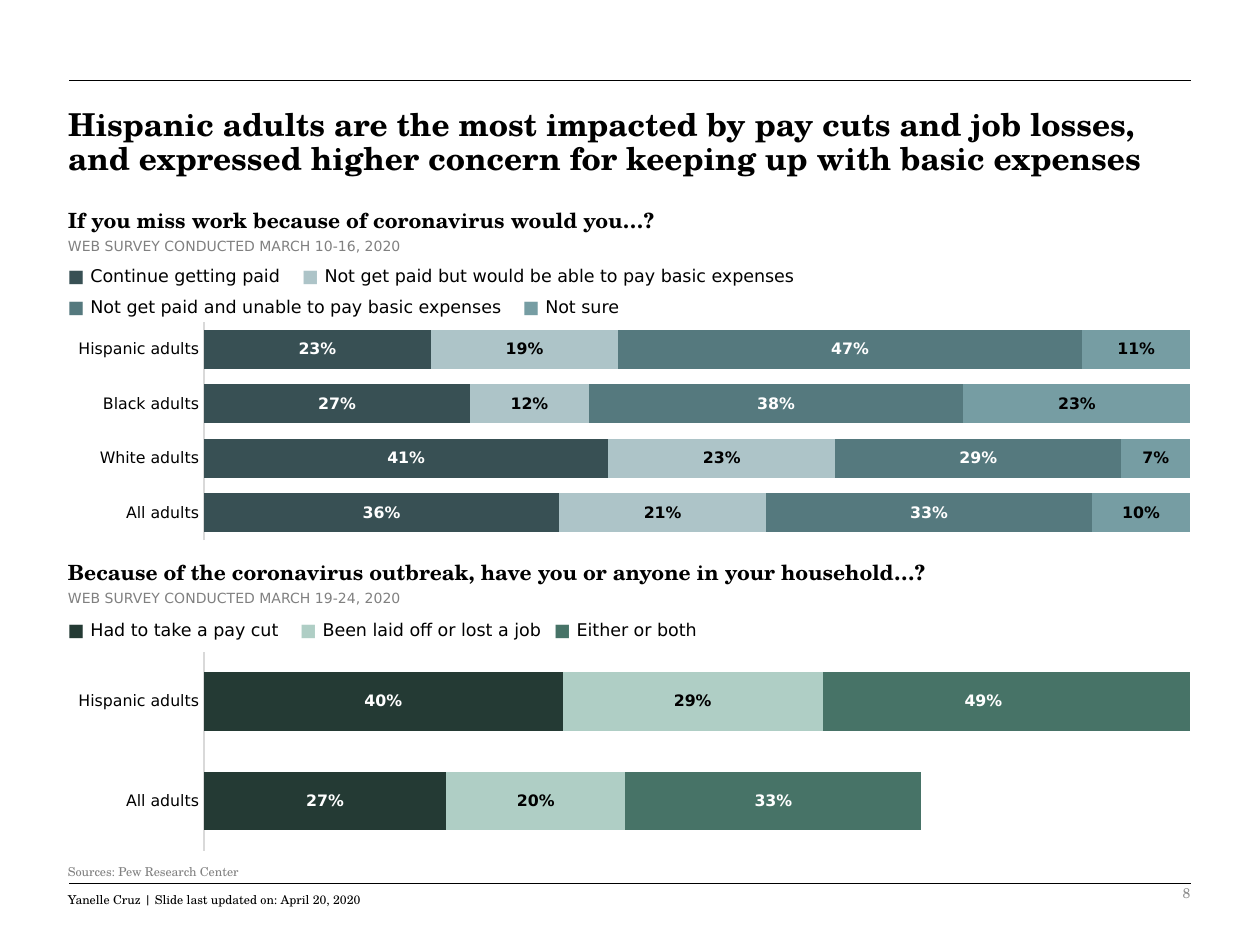
from pptx import Presentation
from pptx.chart.data import CategoryChartData
from pptx.dml.color import RGBColor
from pptx.enum.chart import XL_CHART_TYPE, XL_LABEL_POSITION, XL_TICK_MARK
from pptx.enum.shapes import MSO_CONNECTOR
from pptx.enum.text import MSO_ANCHOR, MSO_AUTO_SIZE, PP_ALIGN
from pptx.oxml.ns import qn
from pptx.oxml.xmlchemy import OxmlElement
from pptx.util import Cm, Pt

STACKED = XL_CHART_TYPE.BAR_STACKED
CENTER = XL_LABEL_POSITION.CENTER
NO_TICK = XL_TICK_MARK.NONE
STRAIGHT = MSO_CONNECTOR.STRAIGHT
TOP, MIDDLE = MSO_ANCHOR.TOP, MSO_ANCHOR.MIDDLE
NO_FIT = MSO_AUTO_SIZE.NONE
LEFT_ALIGN, RIGHT_ALIGN = PP_ALIGN.LEFT, PP_ALIGN.RIGHT

SERIF, SANS = "TeX Gyre Schola", "DejaVu Sans"
BLACK = RGBColor(0x00, 0x00, 0x00)
WHITE = RGBColor(0xFF, 0xFF, 0xFF)
GRAY = RGBColor(0x80, 0x80, 0x80)
NUMBER_GRAY = RGBColor(0x8C, 0x8C, 0x8C)
AXIS_GRAY = RGBColor(0xD9, 0xD9, 0xD9)
SLATE = RGBColor(0x38, 0x50, 0x54)
MIST = RGBColor(0xAD, 0xC4, 0xC8)
TEAL = RGBColor(0x55, 0x79, 0x7E)
SKY = RGBColor(0x76, 0x9D, 0xA3)
PINE = RGBColor(0x24, 0x3A, 0x34)
MINT = RGBColor(0xAF, 0xCE, 0xC5)
FERN = RGBColor(0x47, 0x73, 0x67)

TITLE = ("Hispanic adults are the most impacted by pay cuts and job losses, "
         "and expressed higher concern for keeping up with basic expenses")
SOURCES = "Sources: Pew Research Center"
FOOTER = "Yanelle Cruz | Slide last updated on: April 20, 2020"
PAGE_NUMBER = "8"

SECTIONS = [
    {
        "top": 4.06,
        "heading": "If you miss work because of coronavirus would you…?",
        "survey": "WEB SURVEY CONDUCTED MARCH 10-16, 2020",
        "legend_rows": [(0, 1), (2, 3)],
        "legend_tabs": [(4.72,), (9.17,)],
        "legend_offset": 0.94,
        "chart_offset": 2.34,
        "chart_height": 4.6,
        "categories": ["All adults", "White adults", "Black adults", "Hispanic adults"],
        "series": [
            ("Continue getting paid", SLATE, WHITE, (0.36, 0.41, 0.27, 0.23)),
            ("Not get paid but would be able to pay basic expenses", MIST, BLACK,
             (0.21, 0.23, 0.12, 0.19)),
            ("Not get paid and unable to pay basic expenses", TEAL, WHITE,
             (0.33, 0.29, 0.38, 0.47)),
            ("Not sure", SKY, BLACK, (0.10, 0.07, 0.23, 0.11)),
        ],
        "gap": 40,
        "maximum": 1,
        "label_shift": None,
    },
    {
        "top": 11.15,
        "heading": "Because of the coronavirus outbreak, have you or anyone in your household…?",
        "survey": "WEB SURVEY CONDUCTED MARCH 19-24, 2020",
        "legend_rows": [(0, 1, 2)],
        "legend_tabs": [(4.68, 9.8)],
        "legend_offset": 0.99,
        "chart_offset": 1.91,
        "chart_height": 4.19,
        "categories": ["All adults", "Hispanic adults"],
        "series": [
            ("Had to take a pay cut", PINE, WHITE, (0.27, 0.40)),
            ("Been laid off or lost a job", MINT, BLACK, (0.20, 0.29)),
            ("Either or both", FERN, WHITE, (0.33, 0.49)),
        ],
        "gap": 70,
        "maximum": 1.1,
        "label_shift": (2, 1, -0.02),
    },
]

LEFT, WIDTH = 1.12, 23.37
RULE_LEFT, RULE_RIGHT = 1.4, 24
RULE_TOPS = (1.63, 17.81)
PLOT_AREA = {"x": 0.128, "y": 0.02, "w": 0.851, "h": 0.956}


def style(font, name, size, color, bold=False):
    font.name, font.size, font.bold = name, Pt(size), bold
    font.color.rgb = color


def add_span(para, text, *look):
    span = para.add_run()
    span.text = text
    style(span.font, *look)


def add_box(page, left, top, width, height, anchor=TOP):
    box = page.shapes.add_textbox(Cm(left), Cm(top), Cm(width), Cm(height))
    box.text_frame.word_wrap = True
    box.text_frame.vertical_anchor = anchor
    return box.text_frame


def add_line_of_text(page, place, text, look, spacing=1, align=LEFT_ALIGN, anchor=TOP):
    para = add_box(page, *place, anchor).paragraphs[0]
    para.line_spacing, para.alignment = spacing, align
    add_span(para, text, *look)


def add_rule(page, top):
    rule = page.shapes.add_connector(STRAIGHT, Cm(RULE_LEFT), Cm(top), Cm(RULE_RIGHT), Cm(top))
    rule.line.color.rgb, rule.line.width = BLACK, Pt(0.5)
    rule._element.spPr.append(OxmlElement("a:effectLst"))


def set_tabs(para, stops):
    tabs = OxmlElement("a:tabLst")
    for stop in stops:
        tab = OxmlElement("a:tab")
        tab.set("pos", str(Cm(stop)))
        tab.set("algn", "l")
        tabs.append(tab)
    para._p.get_or_add_pPr().append(tabs)


def add_legend(page, section):
    rows = section["legend_rows"]
    frame = add_box(page, LEFT, section["top"] + section["legend_offset"], WIDTH, 0.7 * len(rows))
    for number, (row, stops) in enumerate(zip(rows, section["legend_tabs"])):
        para = frame.add_paragraph() if number else frame.paragraphs[0]
        para.line_spacing = 1.5
        set_tabs(para, stops)
        for place, index in enumerate(row):
            name, color = section["series"][index][:2]
            add_span(para, "\t■ " if place else "■ ", SANS, 10, color, True)
            add_span(para, name, SANS, 10, BLACK)


def manual_layout(values):
    layout, manual = OxmlElement("c:layout"), OxmlElement("c:manualLayout")
    layout.append(manual)
    for tag, value in values.items():
        item = OxmlElement("c:" + tag)
        item.set("val", str(value))
        manual.append(item)
    return layout


def fix_plot_area(chart):
    area = chart._chartSpace.find(".//" + qn("c:plotArea"))
    for old in area.findall(qn("c:layout")):
        area.remove(old)
    modes = {"layoutTarget": "inner", "xMode": "edge", "yMode": "edge"}
    area.insert(0, manual_layout(modes | PLOT_AREA))


def add_bars(page, section):
    data = CategoryChartData(number_format="0%")
    data.categories = section["categories"]
    for name, _, _, values in section["series"]:
        data.add_series(name, values)
    chart = page.shapes.add_chart(
        STACKED, Cm(LEFT), Cm(section["top"] + section["chart_offset"]),
        Cm(WIDTH), Cm(section["chart_height"]), data).chart
    chart.has_legend = chart.has_title = False
    style(chart.font, SERIF, 10, BLACK)
    fix_plot_area(chart)

    names, scale = chart.category_axis, chart.value_axis
    names.major_tick_mark = names.minor_tick_mark = NO_TICK
    style(names.tick_labels.font, SANS, 9, BLACK)
    names.format.line.color.rgb, names.format.line.width = AXIS_GRAY, Pt(0.75)
    scale.minimum_scale, scale.maximum_scale = 0, section["maximum"]
    scale.has_major_gridlines = scale.visible = False

    plot = chart.plots[0]
    plot.gap_width, plot.overlap, plot.vary_by_categories = section["gap"], 100, False
    for series, (_, color, label_color, _) in zip(plot.series, section["series"]):
        series.format.fill.solid()
        series.format.fill.fore_color.rgb = color
        labels = series.data_labels
        labels.show_value, labels.position = True, CENTER
        labels.number_format, labels.number_format_is_linked = "0%", False
        style(labels.font, SANS, 9, label_color, True)

    if section["label_shift"]:
        index, point, shift = section["label_shift"]
        series = plot.series[index]
        label = series.points[point].data_label
        label.position = CENTER
        style(label.font, SANS, 9, section["series"][index][2], True)
        series._element.find(".//" + qn("c:dLbl")).insert(1, manual_layout({"x": shift, "y": 0}))


def add_title(page):
    title = page.shapes.title
    title.left, title.top, title.width, title.height = Cm(LEFT), Cm(2.08), Cm(WIDTH), Cm(1.78)
    frame = title.text_frame
    frame.auto_size, frame.vertical_anchor, frame.word_wrap = NO_FIT, TOP, True
    para = frame.paragraphs[0]
    para.alignment, para.line_spacing = LEFT_ALIGN, 0.9
    add_span(para, TITLE, SERIF, 18, BLACK, True)


def main():
    deck = Presentation()
    deck.slide_width, deck.slide_height = Cm(25.4), Cm(19.05)
    page = deck.slides.add_slide(deck.slide_layouts[5])
    for top in RULE_TOPS:
        add_rule(page, top)
    add_title(page)
    for section in SECTIONS:
        top = section["top"]
        add_bars(page, section)
        add_legend(page, section)
        add_line_of_text(page, (LEFT, top, WIDTH, 0.76), section["heading"],
                         (SERIF, 12, BLACK, True))
        add_line_of_text(page, (LEFT, top + 0.61, 10, 0.61), section["survey"], (SANS, 8, GRAY))
    add_line_of_text(page, (LEFT, 17.27, 12, 0.5), SOURCES, (SERIF, 7, GRAY), 1.1)
    add_line_of_text(page, (LEFT, 17.83, 8.46, 0.58), FOOTER, (SERIF, 7, BLACK), 1.1)
    add_line_of_text(page, (17.93, 17.5, 6.32, 1.02), PAGE_NUMBER, (SERIF, 8, NUMBER_GRAY),
                     align=RIGHT_ALIGN, anchor=MIDDLE)
    deck.save("out.pptx")


if __name__ == "__main__":
    main()
